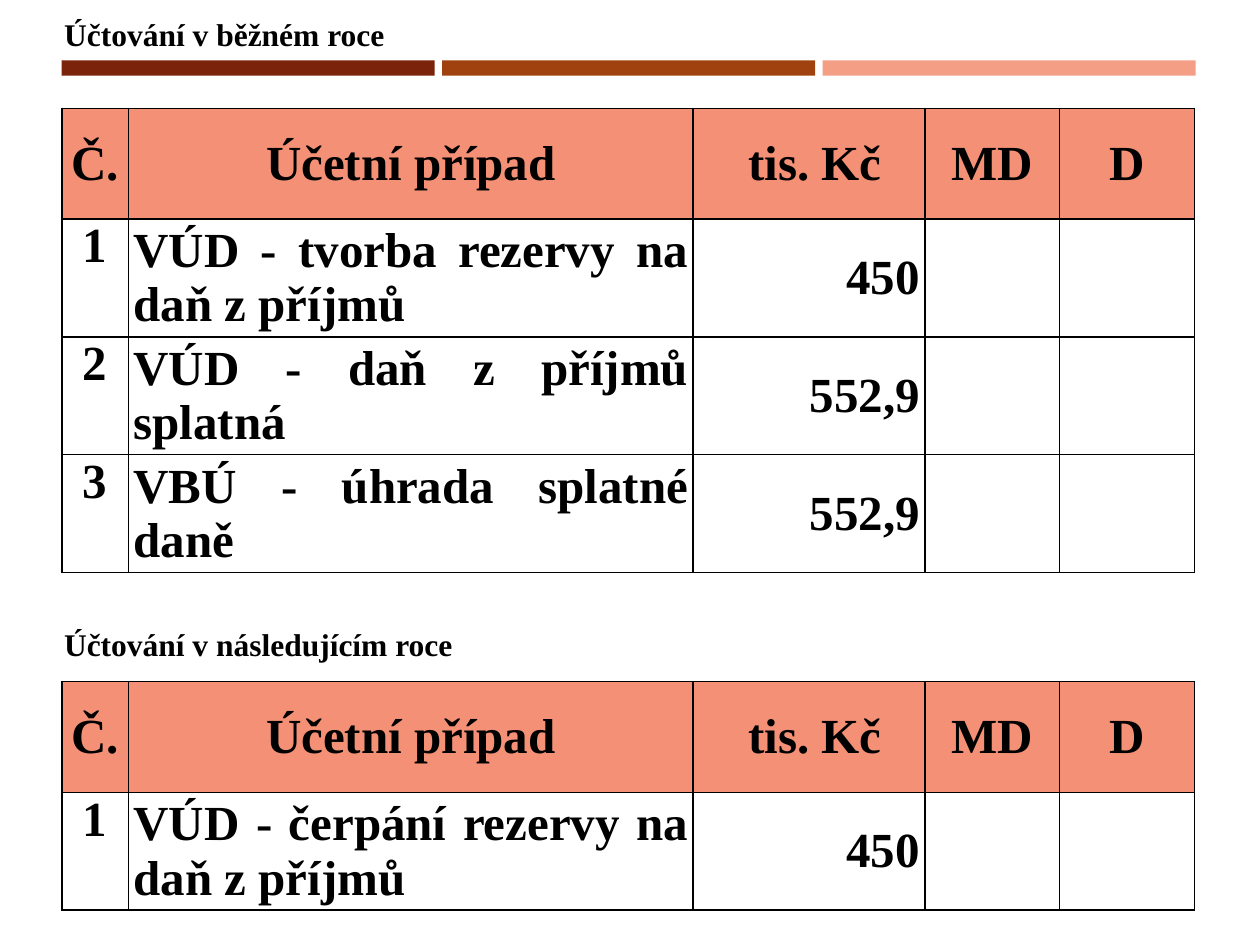
import pptx
import pptx.dml.color
import pptx.enum.shapes
import pptx.enum.text
import pptx.oxml
import pptx.oxml.ns
import pptx.util

RGBColor = pptx.dml.color.RGBColor
Inches = pptx.util.Inches
Pt = pptx.util.Pt
ALIGN = pptx.enum.text.PP_ALIGN
ANCHOR = pptx.enum.text.MSO_ANCHOR

BLACK = RGBColor(0x00, 0x00, 0x00)
HEADER = RGBColor(0xF3, 0x90, 0x75)
BARS = [RGBColor(0x7B, 0x23, 0x0B), RGBColor(0x9F, 0x42, 0x10), RGBColor(0xF4, 0x9E, 0x86)]

FONT = "Times New Roman"
LEFT = 0.49
BAR_WIDTH = 2.96
BAR_GAP = 0.06
COLUMNS = [0.53, 4.48, 1.84, 1.07, 1.07]
HEADER_HEIGHT = 0.88
ROW_HEIGHT = 0.93
HEADINGS = ["Č.", "Účetní případ", " tis. Kč", "MD", "D"]
BODY_ALIGN = [ALIGN.CENTER, ALIGN.JUSTIFY, ALIGN.RIGHT, ALIGN.CENTER, ALIGN.CENTER]
CURRENT_YEAR = [
    ["1", "VÚD - tvorba rezervy na daň z příjmů", "450", "", ""],
    ["2", "VÚD - daň z příjmů splatná", "552,9", "", ""],
    ["3", "VBÚ - úhrada splatné daně", "552,9", "", ""],
]
NEXT_YEAR = [["1", "VÚD - čerpání rezervy na daň z příjmů", "450", "", ""]]


def write(tf, text, size, align):
    tf.text = text
    p = tf.paragraphs[0]
    p.alignment = align
    for r in p.runs:
        r.font.name = FONT
        r.font.size = Pt(size)
        r.font.bold = True
        r.font.color.rgb = BLACK


def format_heading(sp, text, top, width):
    sp.left, sp.top = Inches(0.41), Inches(top)
    sp.width, sp.height = Inches(width), Inches(0.4)
    tf = sp.text_frame
    write(tf, text, 18, ALIGN.LEFT)
    tf.word_wrap = False
    tf.auto_size = pptx.enum.text.MSO_AUTO_SIZE.SHAPE_TO_FIT_TEXT
    tf.vertical_anchor = ANCHOR.TOP


def add_bars(s):
    for i, color in enumerate(BARS):
        left = LEFT + i * (BAR_WIDTH + BAR_GAP)
        sp = s.shapes.add_shape(
            pptx.enum.shapes.MSO_SHAPE.RECTANGLE,
            Inches(left), Inches(0.48), Inches(BAR_WIDTH), Inches(0.12))
        sp.shadow.inherit = False
        sp.fill.solid()
        sp.fill.fore_color.rgb = color
        sp.line.fill.background()


def set_borders(cell):
    tcPr = cell._tc.get_or_add_tcPr()
    for i, side in enumerate(["lnL", "lnR", "lnT", "lnB"]):
        tcPr.insert(i, pptx.oxml.parse_xml(
            f'<a:{side} {pptx.oxml.ns.nsdecls("a")} w="{Pt(1)}">'
            f'<a:solidFill><a:srgbClr val="{BLACK}"/></a:solidFill></a:{side}>'))


def format_cell(cell, text, row, col):
    cell.margin_left = cell.margin_right = Inches(0.04)
    cell.margin_top = cell.margin_bottom = 0
    is_header = row == 0
    if is_header:
        cell.fill.solid()
        cell.fill.fore_color.rgb = HEADER
    else:
        cell.fill.background()
    cell.vertical_anchor = ANCHOR.MIDDLE if is_header or col > 0 else ANCHOR.TOP
    write(cell.text_frame, text, 28, ALIGN.CENTER if is_header else BODY_ALIGN[col])
    set_borders(cell)


def add_entries(s, top, entries):
    rows = [HEADINGS] + entries
    heights = [HEADER_HEIGHT] + [ROW_HEIGHT] * len(entries)
    table = s.shapes.add_table(
        len(rows), len(COLUMNS), Inches(LEFT), Inches(top),
        Inches(sum(COLUMNS)), Inches(sum(heights))).table
    table.horz_banding = False
    for column, width in zip(table.columns, COLUMNS):
        column.width = Inches(width)
    for i, (values, height) in enumerate(zip(rows, heights)):
        table.rows[i].height = Inches(height)
        for j, text in enumerate(values):
            format_cell(table.cell(i, j), text, i, j)


def main():
    prs = pptx.Presentation()
    prs.slide_width, prs.slide_height = Inches(10), Inches(7.5)
    s = prs.slides.add_slide(prs.slide_layouts[5])
    add_bars(s)
    add_entries(s, 0.86, CURRENT_YEAR)
    format_heading(s.shapes.title, "Účtování v běžném roce", 0.07, 2.77)
    format_heading(s.shapes.add_textbox(0, 0, 0, 0), "Účtování v následujícím roce", 4.91, 3.32)
    add_entries(s, 5.41, NEXT_YEAR)
    prs.save("out.pptx")


if __name__ == "__main__":
    main()
